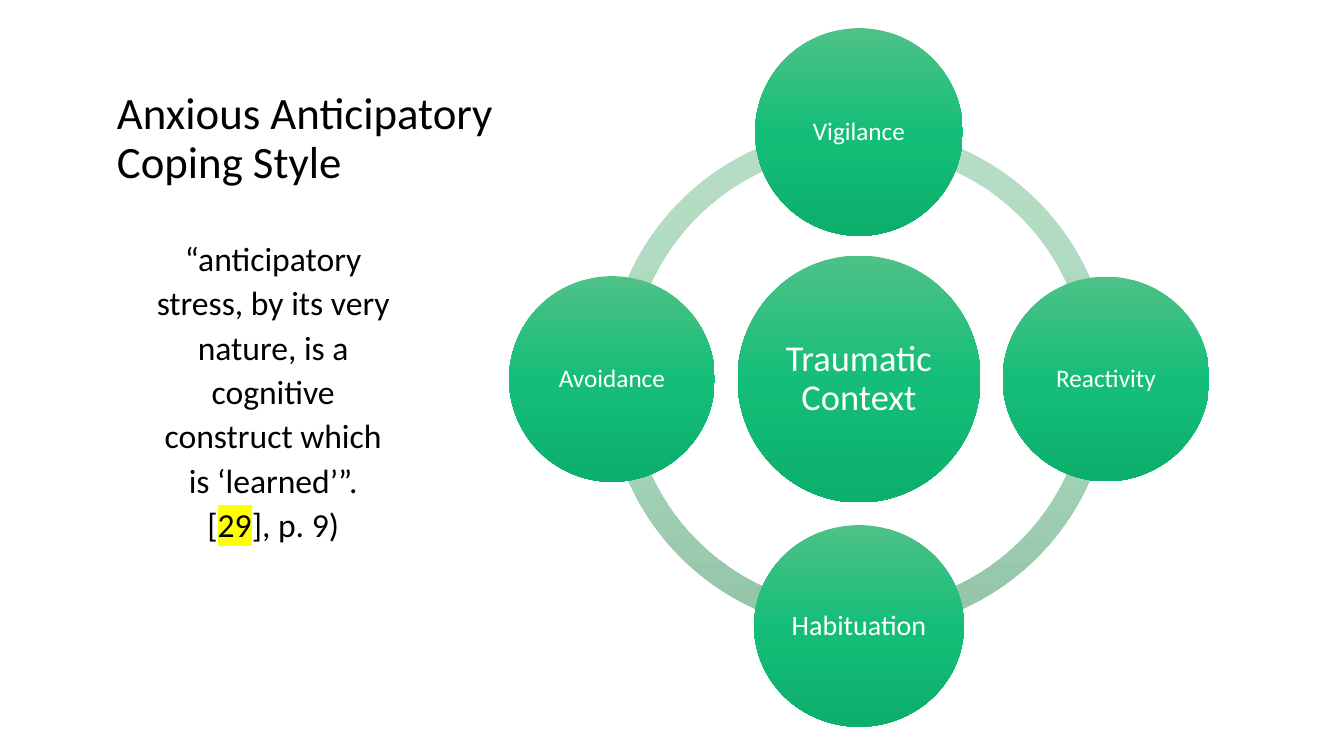
from copy import deepcopy

from lxml.etree import SubElement
from pptx import Presentation
from pptx.dml.color import RGBColor
from pptx.enum.shapes import MSO_SHAPE
from pptx.enum.text import MSO_ANCHOR, MSO_AUTO_SIZE, PP_ALIGN
from pptx.oxml.ns import qn
from pptx.util import Inches, Pt

BLACK = RGBColor(0x00, 0x00, 0x00)
WHITE = RGBColor(0xFF, 0xFF, 0xFF)
YELLOW = RGBColor(0xFF, 0xFF, 0x00)
PALE = [RGBColor(0xB7, 0xDD, 0xC6), RGBColor(0xAA, 0xD9, 0xBD), RGBColor(0x94, 0xC4, 0xA7)]
GREEN = [RGBColor(0x4E, 0xC1, 0x87), RGBColor(0x15, 0xBE, 0x78), RGBColor(0x0C, 0xAF, 0x6C)]
FONT = "Calibri"


def shade(shape, colors):
    """Fill from top to bottom with three evenly spaced colours, without outline or shadow."""
    shape.shadow.inherit = False
    shape.line.fill.background()
    shape.fill.gradient()
    shape.fill.gradient_angle = 270
    stops = shape.element.spPr.find(".//" + qn("a:gsLst"))
    stops.append(deepcopy(stops[-1]))
    for i, stop in enumerate(shape.fill.gradient_stops):
        stop.position = i / 2
        stop.color.rgb = colors[i]


def write(par, text, size, color):
    run = par.add_run()
    run.text = text
    run.font.name = FONT
    run.font.size = Pt(size)
    run.font.color.rgb = color
    return run


prs = Presentation()
prs.slide_width, prs.slide_height = Inches(13.33), Inches(7.5)
slide = prs.slides.add_slide(prs.slide_layouts[1])
title, body = slide.placeholders

# Title and quotation
for holder, box, anchor in [
    (title, (1.06, 0.76, 5.08, 1.25), MSO_ANCHOR.MIDDLE),
    (body, (1.42, 2.27, 2.58, 3.67), MSO_ANCHOR.TOP),
]:
    holder.left, holder.top, holder.width, holder.height = map(Inches, box)
    holder.text_frame.auto_size = MSO_AUTO_SIZE.NONE
    holder.text_frame.vertical_anchor = anchor

head = title.text_frame.paragraphs[0]
head.alignment = PP_ALIGN.LEFT
head.line_spacing = 0.9
write(head, "Anxious Anticipatory Coping Style", 32, BLACK)

quote = body.text_frame.paragraphs[0]
cite = body.text_frame.add_paragraph()
for par in (quote, cite):
    par.alignment = PP_ALIGN.CENTER
    par.line_spacing = 1.1
    par.space_before = Pt(0)
    props = par._p.get_or_add_pPr()
    props.set("marL", "0")
    props.set("indent", "0")
    SubElement(props, qn("a:buNone"))
write(quote, "“anticipatory stress, by its very nature, is a cognitive construct "
             "which is ‘learned’”.", 24, BLACK)
write(cite, "[", 24, BLACK)
number = write(cite, "29", 24, BLACK)
write(cite, "], p. 9)", 24, BLACK)
mark = SubElement(number.font._element, qn("a:highlight"))
SubElement(mark, qn("a:srgbClr")).set("val", str(YELLOW))
number.font._element.find(qn("a:solidFill")).addnext(mark)

# Ring of four quarter arcs; an adjustment of 54 is a quarter turn
MID_X, MID_Y, RING, ORBIT = 8.52, 3.76, 5, 2.45
QUARTER = 54
cycle = slide.shapes.add_group_shape().shapes
for turn in (2, 1, 0, 3):
    arc = cycle.add_shape(MSO_SHAPE.BLOCK_ARC, Inches(MID_X - RING / 2),
                          Inches(MID_Y - RING / 2), Inches(RING), Inches(RING))
    arc.adjustments[0] = turn * QUARTER
    arc.adjustments[1] = (turn + 1) % 4 * QUARTER
    arc.adjustments[2] = 0.046
    shade(arc, PALE)

# Circles: label, direction from the centre, width, height, text size, inset
for label, dx, dy, wide, high, size, inset in [
    ("Traumatic Context", 0, 0, 2.41, 2.45, 26, 0.04),
    ("Vigilance", 0, -1, 2.06, 2.06, 18, 0.03),
    ("Reactivity", 1, 0, 2.05, 2.03, 18, 0.03),
    ("Habituation", 0, 1, 2.08, 2, 20, 0.03),
    ("Avoidance", -1, 0, 2.04, 2.04, 18, 0.03),
]:
    disc = cycle.add_shape(MSO_SHAPE.OVAL, Inches(MID_X + dx * ORBIT - wide / 2),
                           Inches(MID_Y + dy * ORBIT - high / 2), Inches(wide), Inches(high))
    shade(disc, GREEN)
    frame = disc.text_frame
    frame.word_wrap = True
    frame.vertical_anchor = MSO_ANCHOR.MIDDLE
    for side in ("left", "top", "right", "bottom"):
        setattr(frame, "margin_" + side, Inches(inset))
    par = frame.paragraphs[0]
    par.alignment = PP_ALIGN.CENTER
    par.line_spacing = 0.9
    write(par, label, size, WHITE)

prs.save("out.pptx")
